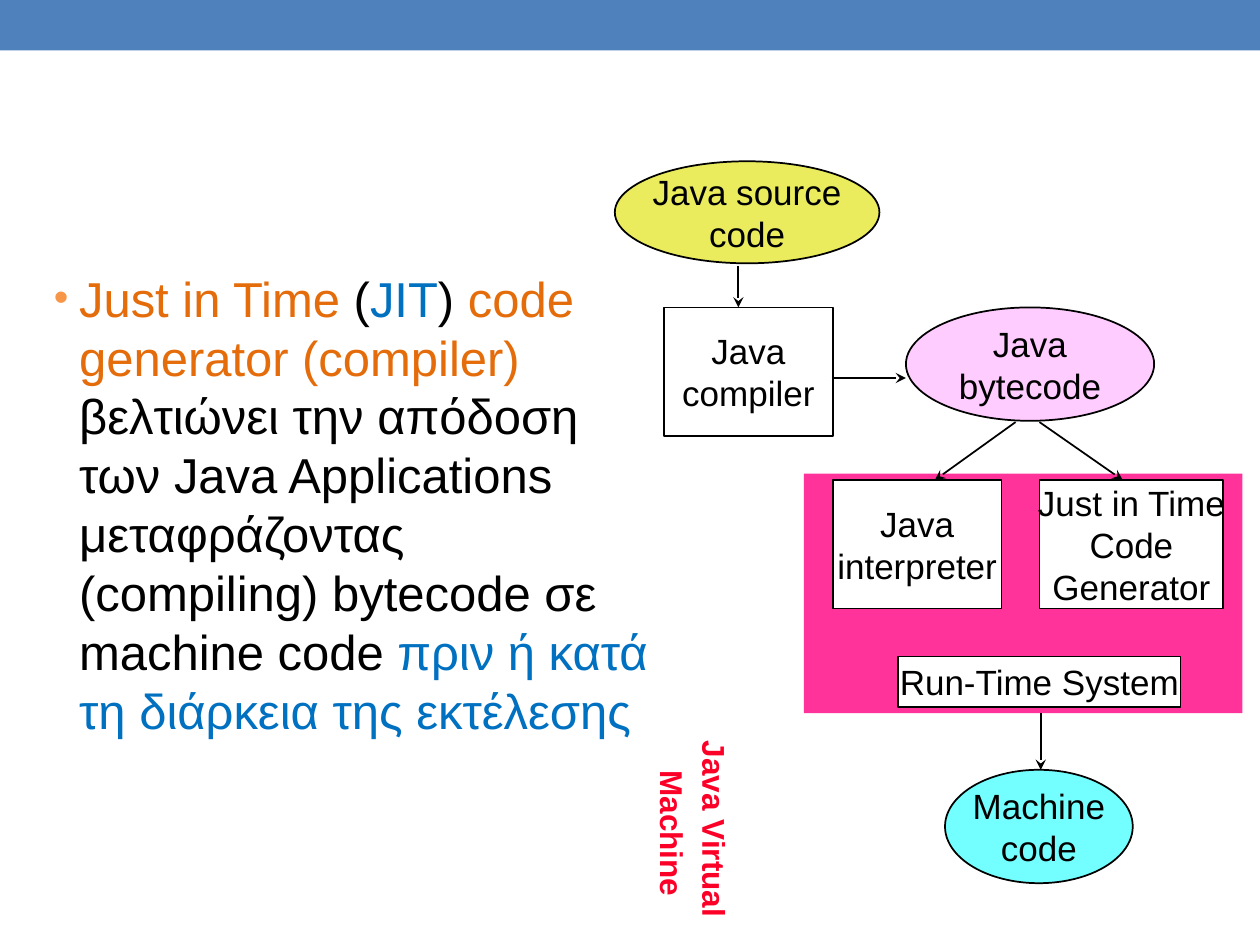
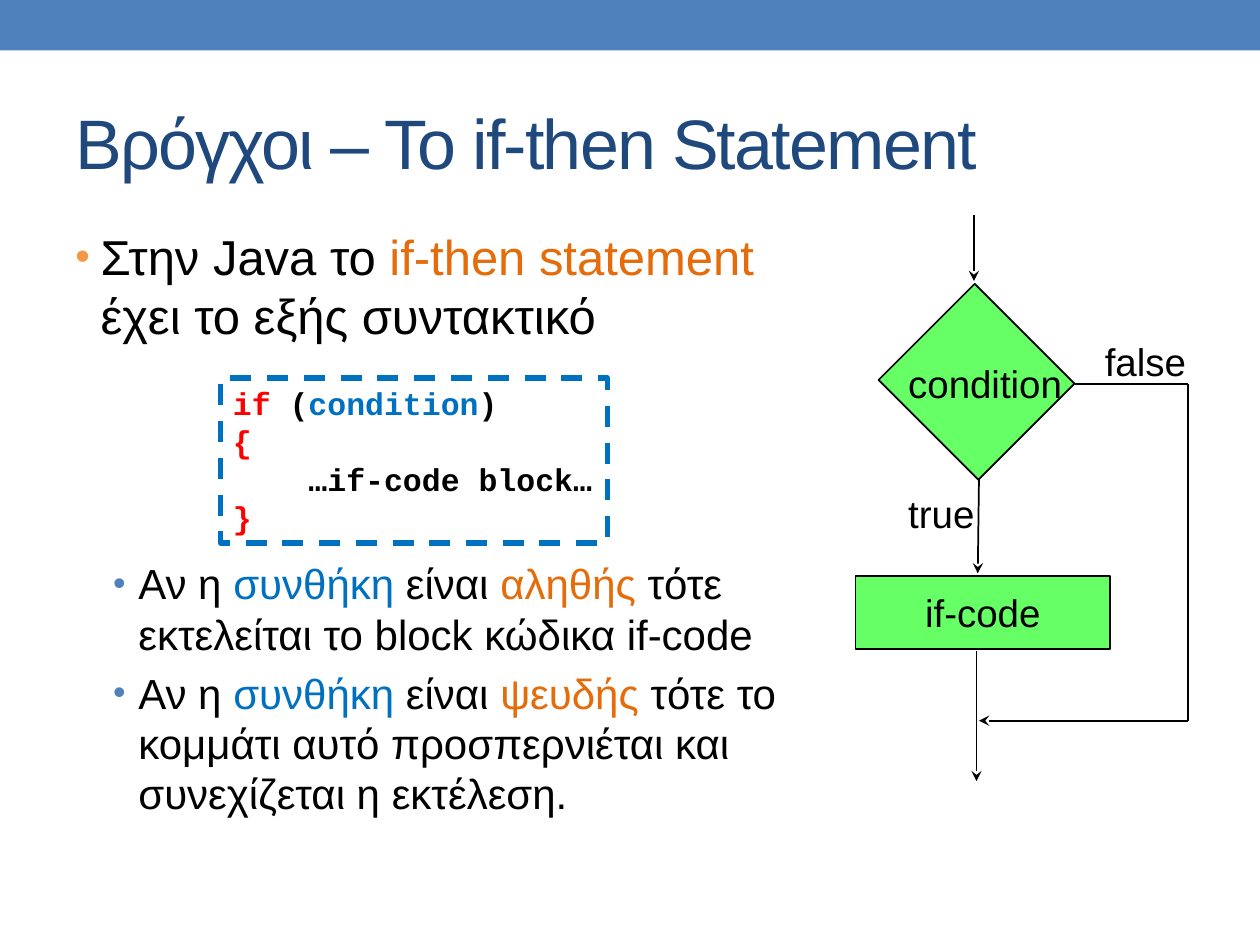
from dataclasses import dataclass

from lxml.etree import SubElement
from pptx import Presentation
from pptx.dml.color import RGBColor
from pptx.enum.dml import MSO_LINE
from pptx.enum.shapes import MSO_CONNECTOR, MSO_SHAPE as SHAPE
from pptx.enum.text import MSO_ANCHOR as ANCHOR, PP_ALIGN as ALIGN
from pptx.oxml.ns import qn
from pptx.util import Inches, Pt

BLACK = RGBColor(0x00, 0x00, 0x00)
WHITE = RGBColor(0xFF, 0xFF, 0xFF)
BAND_BLUE = RGBColor(0x4F, 0x81, 0xBD)
TITLE_BLUE = RGBColor(0x1F, 0x49, 0x7D)
BLUE = RGBColor(0x00, 0x70, 0xC0)
ORANGE = RGBColor(0xE4, 0x6C, 0x0A)
BULLET_ORANGE = RGBColor(0xF7, 0x96, 0x46)
YELLOW = RGBColor(0xEA, 0xEC, 0x5E)
CYAN = RGBColor(0x73, 0xFF, 0xFF)
PINK = RGBColor(0xFF, 0xCC, 0xFF)
MAGENTA = RGBColor(0xFF, 0x33, 0x99)
GREEN = RGBColor(0x66, 0xFF, 0x66)
CODE_RED = RGBColor(0xFF, 0x00, 0x00)
LABEL_RED = RGBColor(0xFC, 0x01, 0x28)

FONT, CODE_FONT = "Arial", "Courier New"

# The slide is a grid of square cells
COLUMNS, ROWS, CELL = 100, 75, Inches(0.1)


def cells(count):
    return round(count * CELL)


@dataclass
class Box:
    """A region, measured in cells."""
    left: float
    top: float
    width: float
    height: float

    def inner(self, left, top, width, height):
        return Box(self.left + left, self.top + top, width, height)

    def point(self, column, row):
        return cells(self.left + column), cells(self.top + row)

    def lengths(self):
        return [cells(n) for n in (self.left, self.top, self.width, self.height)]


# Shared text and drawing helpers
def style_run(run, size, color, font=FONT, bold=False):
    run.font.name, run.font.size, run.font.bold = font, Pt(size), bold
    run.font.color.rgb = color


def add_runs(paragraph, pieces, size, font=FONT, bold=False):
    for words, color in pieces:
        run = paragraph.add_run()
        run.text = words
        style_run(run, size, color, font, bold)


def write(frame, text, size, color=BLACK, align=ALIGN.LEFT, bold=False):
    frame.text = text
    for paragraph in frame.paragraphs:
        paragraph.alignment = align
        for run in paragraph.runs:
            style_run(run, size, color, bold=bold)


def add_text_frame(slide, box, wrap=True):
    frame = slide.shapes.add_textbox(*box.lengths()).text_frame
    frame.word_wrap = wrap
    return frame


def add_node(slide, kind, box, fill=None, line=BLACK, text="", size=20):
    node = slide.shapes.add_shape(kind, *box.lengths())
    node.shadow.inherit = False
    if fill is None:
        node.fill.background()
    else:
        node.fill.solid()
        node.fill.fore_color.rgb = fill
    if line is None:
        node.line.fill.background()
    else:
        node.line.color.rgb = line
        node.line.width = Pt(1)
    if text:
        node.text_frame.word_wrap = False
        node.text_frame.vertical_anchor = ANCHOR.MIDDLE
        write(node.text_frame, text, size, align=ALIGN.CENTER)
    return node


def add_line(slide, box, start, end, arrow=True):
    line = slide.shapes.add_connector(
        MSO_CONNECTOR.STRAIGHT, *box.point(*start), *box.point(*end))
    line.line.color.rgb = BLACK
    line.line.width = Pt(1)
    props = line._element.spPr
    if arrow:
        SubElement(props.find(qn("a:ln")), qn("a:tailEnd"), type="stealth")
    SubElement(props, qn("a:effectLst"))


def add_bullet(paragraph, pieces, size, indent, color, space=None):
    add_runs(paragraph, pieces, size)
    paragraph.space_before = Pt(size * 0.2 if space is None else space)
    props = paragraph._p.get_or_add_pPr()
    props.set("marL", str(Inches(indent)))
    props.set("indent", str(-Inches(0.2)))
    SubElement(SubElement(props, qn("a:buClr")), qn("a:srgbClr"), val=str(color))
    SubElement(props, qn("a:buSzPct"), val="85000")
    SubElement(props, qn("a:buFont"), typeface=FONT)
    SubElement(props, qn("a:buChar"), char="•")


def new_slide(deck):
    slide = deck.slides.add_slide(deck.slide_layouts[6])
    add_node(slide, SHAPE.RECTANGLE, Box(0, 0, COLUMNS, 4), BAND_BLUE, None)
    return slide


def add_title(slide, box, text):
    frame = add_text_frame(slide, box)
    frame.vertical_anchor = ANCHOR.MIDDLE
    write(frame, text, 40, TITLE_BLUE)
    frame.paragraphs[0].runs[0]._r.get_or_add_rPr().set("spc", "-100")


# Slide 1: just in time compilation
def add_jit_summary(slide, box):
    frame = add_text_frame(slide, box)
    add_bullet(frame.paragraphs[0], [
        ("Just in Time ", ORANGE), ("(", BLACK), ("JIT", BLUE), (") ", BLACK),
        ("code generator (compiler) ", ORANGE),
        ("βελτιώνει την απόδοση των Java Applications μεταφράζοντας "
         "(compiling) bytecode σε machine code ", BLACK),
        ("πριν ή κατά τη διάρκεια της εκτέλεσης", BLUE),
    ], 28, 0.2, BULLET_ORANGE)


def add_compilation_flow(slide, box):
    # Runtime panel, behind its three parts
    add_node(slide, SHAPE.RECTANGLE, box.inner(15, 24.8, 34.8, 19), MAGENTA, None)

    # Code forms
    for text, fill, place in [
        ("Java source\ncode", YELLOW, (0, 0, 21, 8.1)),
        ("Machine\ncode", CYAN, (26.2, 48.3, 14.9, 9)),
        ("Java\nbytecode", PINK, (23.1, 11.6, 19.7, 9)),
    ]:
        add_node(slide, SHAPE.OVAL, box.inner(*place), fill, text=text)

    # Tools
    for text, fill, place in [
        ("Java\ncompiler", None, (3.9, 11.6, 13.4, 10.2)),
        ("Java\ninterpreter", WHITE, (17.3, 25.3, 13.4, 10.2)),
        ("Just in Time\nCode\nGenerator", WHITE, (33.7, 25.3, 14.6, 10.2)),
        ("Run-Time System", WHITE, (22.5, 39.3, 22.4, 4)),
    ]:
        add_node(slide, SHAPE.RECTANGLE, box.inner(*place), fill, text=text)

    # Steps
    for start, end in [
        ((9.8, 8.3), (9.8, 11.6)),
        ((17.2, 17.2), (23.1, 17.2)),
        ((31.8, 20.7), (25.4, 25.3)),
        ((33.7, 20.7), (40.3, 25.3)),
        ((33.8, 43.8), (33.8, 48.3)),
    ]:
        add_line(slide, box, start, end)


def add_machine_label(slide, box):
    label = slide.shapes.add_textbox(*box.lengths())
    label.rotation = 90
    frame = label.text_frame
    frame.word_wrap = True
    frame.vertical_anchor = ANCHOR.MIDDLE
    write(frame, "Java Virtual\n Machine", 18, LABEL_RED, ALIGN.CENTER, True)
    for paragraph in frame.paragraphs:
        paragraph.line_spacing = 0.7
        paragraph.space_before = Pt(9)


# Slide 2: the if-then statement
def add_if_rules(slide, box):
    frame = add_text_frame(slide, box)
    add_bullet(frame.paragraphs[0], [
        ("Στην Java το ", BLACK), ("if-then statement ", ORANGE),
        ("έχει το εξής συντακτικό", BLACK),
    ], 28, 0.2, BULLET_ORANGE)
    # The first outcome leaves room for the code block
    for outcome, result, space in [
        ("αληθής ", "τότε εκτελείται το block κώδικα if-code", 122),
        ("ψευδής ", "τότε το κομμάτι αυτό προσπερνιέται και "
                    "συνεχίζεται η εκτέλεση.", None),
    ]:
        add_bullet(frame.add_paragraph(), [
            ("Αν η ", BLACK), ("συνθήκη", BLUE), (" είναι ", BLACK),
            (outcome, ORANGE), (result, BLACK),
        ], 24, 0.5, BAND_BLUE, space)


def add_if_syntax(slide, box):
    block = add_node(slide, SHAPE.RECTANGLE, box, line=BLUE)
    block.line.width = Pt(3)
    block.line.dash_style = MSO_LINE.DASH
    frame = block.text_frame
    frame.word_wrap = False
    frame.vertical_anchor = ANCHOR.TOP
    code = [
        (0, [("if", CODE_RED), (" (", BLACK), ("condition", BLUE), (")", BLACK)]),
        (0, [("{", CODE_RED)]),
        (0.6, [("…if-code block…", BLACK)]),
        (0, [("}", CODE_RED)]),
    ]
    for number, (indent, pieces) in enumerate(code):
        paragraph = frame.add_paragraph() if number else frame.paragraphs[0]
        paragraph.alignment = ALIGN.LEFT
        paragraph._p.get_or_add_pPr().set("marL", str(Inches(indent)))
        add_runs(paragraph, pieces, 18, CODE_FONT, True)


def add_if_flow(slide, box):
    # Branch body and decision
    add_node(slide, SHAPE.RECTANGLE, box.inner(0, 28.6, 20.2, 5.8), GREEN,
             text="if-code", size=22)
    decision = add_node(slide, SHAPE.RECTANGLE, box.inner(4, 7.8, 11.2, 10.8), GREEN)
    decision.rotation = 45

    # Labels
    for text, place in [
        ("condition", (3.2, 11, 14.4, 4.7)),
        ("false", (18.8, 9.2, 8.6, 4.7)),
        ("true", (3.2, 21.3, 7.4, 4.7)),
    ]:
        write(add_text_frame(slide, box.inner(*place), wrap=False), text, 22)

    # Main path, then the bypass
    for start, end, arrow in [
        ((9.4, 0), (9.4, 5.2), True),
        ((9.8, 20.9), (9.7, 28.4), True),
        ((9.6, 34.6), (9.6, 44.9), True),
        ((17.4, 13.4), (26.4, 13.4), False),
        ((26.4, 13.4), (26.4, 40.1), False),
        ((26.4, 40.1), (9.8, 40.1), True),
    ]:
        add_line(slide, box, start, end, arrow)


def main():
    deck = Presentation()
    deck.slide_width, deck.slide_height = cells(COLUMNS), cells(ROWS)

    jit = new_slide(deck)
    add_jit_summary(jit, Box(3.3, 20.8, 49.4, 49.4))
    add_compilation_flow(jit, Box(48.8, 12.8, 49.8, 57.3))
    add_machine_label(jit, Box(45.4, 62.4, 18.6, 6.8))

    if_then = new_slide(deck)
    add_title(if_then, Box(5, 5.8, 90, 10.8), "Βρόγχοι – Το if-then Statement")
    add_if_rules(if_then, Box(5, 17.5, 58.6, 53.3))
    add_if_flow(if_then, Box(67.9, 17.1, 26.4, 44.9))
    add_if_syntax(if_then, Box(17.5, 30, 30.7, 13.1))

    deck.save("out.pptx")


if __name__ == "__main__":
    main()
